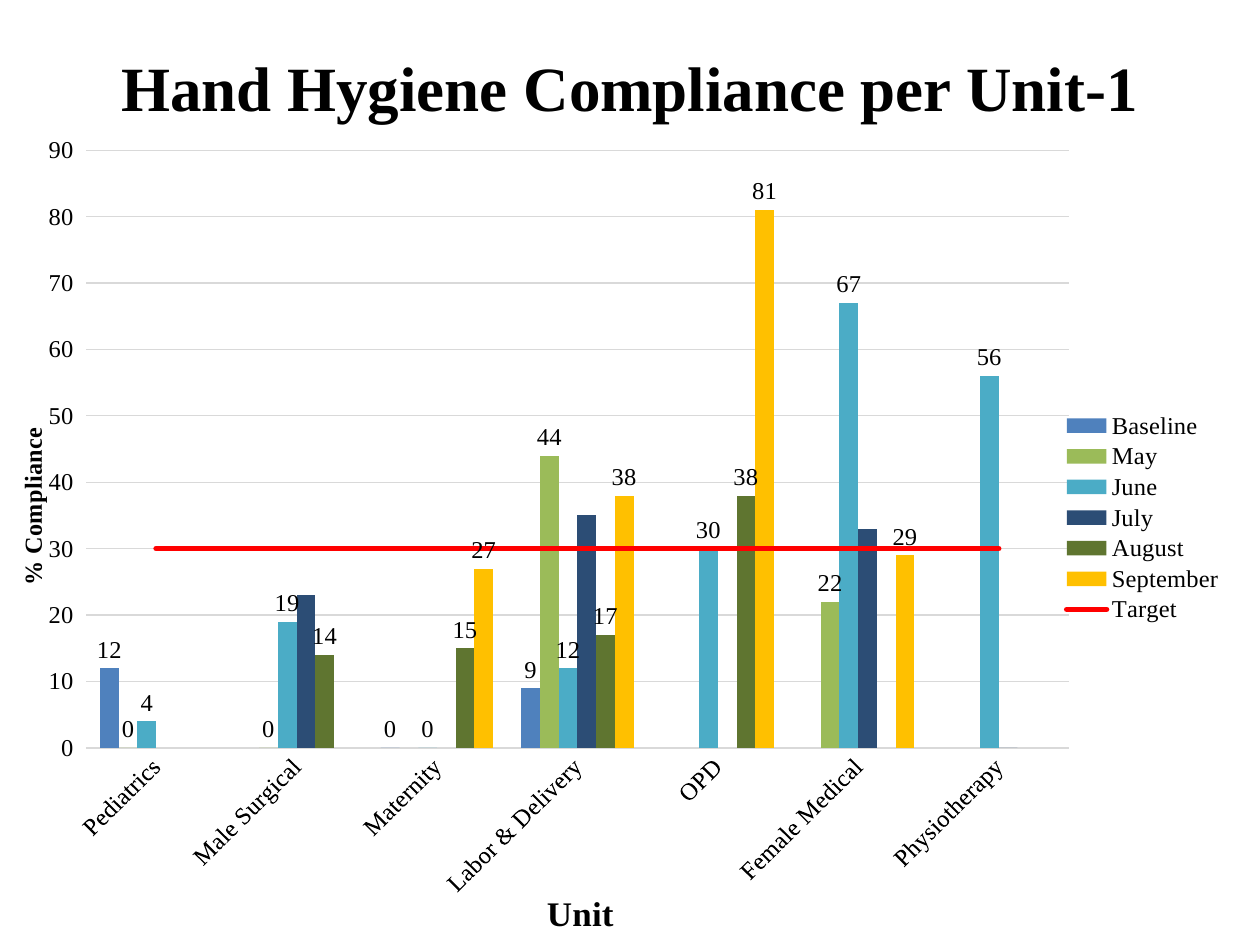
"""Build the hand hygiene compliance slide with a column and target line chart."""
import lxml.etree
import pptx
import pptx.chart.data
import pptx.dml.color
import pptx.enum.chart
import pptx.enum.text
import pptx.oxml.ns
import pptx.util

Cm, Pt = pptx.util.Cm, pptx.util.Pt
qn = pptx.oxml.ns.qn
FONT = "Times New Roman"
COLORS = {
    "text": "000000", "grid": "D9D9D9",
    "Baseline": "4F81BD", "May": "9BBB59", "June": "4BACC6", "July": "2C4D75",
    "August": "5F7530", "September": "FFC000", "Target": "FF0000",
}
TITLE = "Hand Hygiene Compliance per Unit-1"
UNITS = ["Pediatrics", "Male Surgical", "Maternity", "Labor & Delivery",
         "OPD", "Female Medical", "Physiotherapy"]
SERIES = {
    "Baseline": [12, None, 0, 9, None, None, None],
    "May": [0, 0, None, 44, None, 22, None],
    "June": [4, 19, 0, 12, 30, 67, 56],
    "July": [None, 23, None, 35, None, 33, 0],
    "August": [None, 14, 15, 17, 38, None, None],
    "September": [None, None, 27, 38, 81, 29, None],
    "Target": [30] * len(UNITS),
}
UNLABELED = ("July", "Target")


def rgb(name):
    return pptx.dml.color.RGBColor.from_string(COLORS[name])


def style(font, size, bold=False, color="text"):
    font.name, font.size, font.bold = FONT, Pt(size), bold
    font.color.rgb = rgb(color)


def write(tf, text, size=14, bold=True, align=pptx.enum.text.PP_ALIGN.CENTER):
    p = tf.paragraphs[0]
    p.alignment = align
    r = p.add_run()
    r.text = text
    style(r.font, size, bold)


def add(parent, tag, **attrs):
    return lxml.etree.SubElement(parent, qn(tag), attrs)


def place(el, x, y, w=None, h=None, inner=False):
    for old in el.findall(qn("c:layout")):
        el.remove(old)
    layout = el.makeelement(qn("c:layout"), {})
    manual = add(layout, "c:manualLayout")
    if inner:
        add(manual, "c:layoutTarget", val="inner")
    add(manual, "c:xMode", val="edge")
    add(manual, "c:yMode", val="edge")
    for key, value in zip("xywh", (x, y, w, h)):
        if value is not None:
            add(manual, "c:" + key, val=str(value))
    overlay = el.find(qn("c:overlay"))
    if overlay is None:
        el.insert(0, layout)
    else:
        overlay.addprevious(layout)


def move_to_line(chart, name):
    bar = chart.plots[0]._element
    ser = next(s for s in chart.plots[0].series if s.name == name)._element
    for old in ser.findall(qn("c:invertIfNegative")):
        ser.remove(old)
    line = bar.makeelement(qn("c:lineChart"), {})
    add(line, "c:grouping", val="standard")
    add(line, "c:varyColors", val="0")
    line.append(ser)
    marker = ser.makeelement(qn("c:marker"), {})
    add(marker, "c:symbol", val="none")
    ser.find(qn("c:spPr")).addnext(marker)
    add(ser, "c:smooth", val="0")
    add(line, "c:marker", val="1")
    for axis in bar.findall(qn("c:axId")):
        add(line, "c:axId", val=axis.get("val"))
    bar.addnext(line)


def format_axis(axis, title, size, x, y):
    write(axis.axis_title.text_frame, title, size)
    place(axis.axis_title._element, x, y)
    style(axis.tick_labels.font, 14)


def add_compliance_chart(s):
    data = pptx.chart.data.CategoryChartData()
    data.categories = UNITS
    for name, values in SERIES.items():
        data.add_series(name, values)
    chart = s.shapes.add_chart(
        pptx.enum.chart.XL_CHART_TYPE.COLUMN_CLUSTERED,
        Cm(0), Cm(2.54), Cm(24.77), Cm(16.51), data).chart
    chart.has_title = False
    style(chart.font, 14)
    plot = chart.plots[0]
    plot.gap_width, plot.overlap, plot.vary_by_categories = 150, 0, False
    for ser in plot.series:
        if ser.name == "Target":
            ser.format.line.color.rgb = rgb(ser.name)
            ser.format.line.width = Pt(3.25)
            ser.format.line._ln.set("cap", "rnd")
        else:
            ser.format.fill.solid()
            ser.format.fill.fore_color.rgb = rgb(ser.name)
        if ser.name not in UNLABELED:
            labels = ser.data_labels
            labels.show_value = True
            labels.position = pptx.enum.chart.XL_LABEL_POSITION.OUTSIDE_END
            style(labels.font, 14)

    tick = pptx.enum.chart.XL_TICK_MARK
    cat, val = chart.category_axis, chart.value_axis
    format_axis(cat, "Unit", 20, 0.44, 0.94)
    format_axis(val, "% Compliance", 14, 0.01, 0.37)
    cat.major_tick_mark, val.major_tick_mark = tick.NONE, tick.OUTSIDE
    cat.tick_labels.font._element.getparent().getparent().getparent().find(
        qn("a:bodyPr")).set("rot", "-2700000")
    val.minimum_scale, val.maximum_scale, val.major_unit = 0, 90, 10
    val.format.line.fill.background()
    for line in (cat.format.line, val.major_gridlines.format.line):
        line.color.rgb, line.width = rgb("grid"), Pt(0.75)

    chart.has_legend = True
    chart.legend.position = pptx.enum.chart.XL_LEGEND_POSITION.RIGHT
    chart.legend.include_in_layout = False
    style(chart.legend.font, 14)
    place(chart.legend._element, 0.86, 0.35, 0.14, 0.27)
    place(plot._element.getparent(), 0.07, 0.03, 0.8, 0.74, inner=True)
    move_to_line(chart, "Target")


def main():
    prs = pptx.Presentation()
    prs.slide_width, prs.slide_height = Cm(25.4), Cm(19.05)
    s = prs.slides.add_slide(prs.slide_layouts[6])
    tf = s.shapes.add_textbox(Cm(1.27), Cm(0.76), Cm(22.86), Cm(1.98)).text_frame
    tf.word_wrap = True
    tf.vertical_anchor = pptx.enum.text.MSO_ANCHOR.MIDDLE
    write(tf, TITLE, 36)
    add_compliance_chart(s)
    prs.save("out.pptx")


if __name__ == "__main__":
    main()
